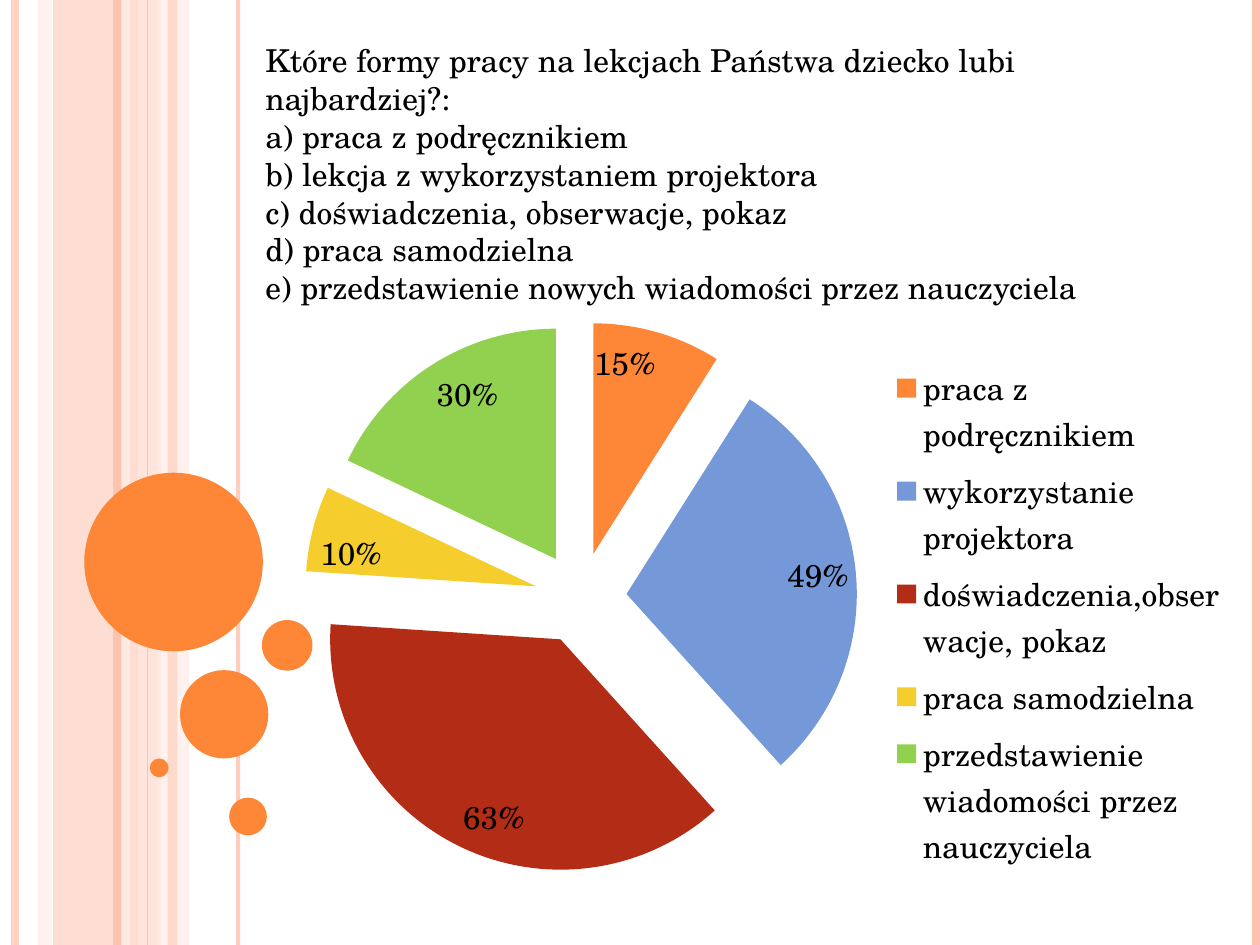
from lxml.etree import SubElement
from pptx import Presentation
from pptx.chart.data import CategoryChartData
from pptx.dml.color import RGBColor
from pptx.enum.chart import XL_CHART_TYPE as ChartType, XL_LABEL_POSITION as LabelPos, XL_LEGEND_POSITION as LegendPos
from pptx.enum.shapes import MSO_CONNECTOR as Connector, MSO_SHAPE as Shape
from pptx.enum.text import MSO_AUTO_SIZE as AutoSize
from pptx.oxml import parse_xml
from pptx.oxml.ns import qn
from pptx.util import Cm, Pt

BLACK = RGBColor(0x00, 0x00, 0x00)
ORANGE = RGBColor(0xFE, 0x86, 0x37)
BLUE = RGBColor(0x75, 0x98, 0xD9)
RED = RGBColor(0xB3, 0x2C, 0x16)
YELLOW = RGBColor(0xF5, 0xCD, 0x2D)
GREEN = RGBColor(0x92, 0xD0, 0x50)
SALMON = RGBColor(0xFE, 0xC3, 0xAE)
PEACH = RGBColor(0xFF, 0xD9, 0xCE)
CREAM = RGBColor(0xFF, 0xED, 0xE8)

WIDTH, HEIGHT = 25.4, 19.05

BANDS = [(1.07, 1.7, SALMON, 54), (0.76, 0.28, PEACH, 36),
         (2.74, 0.51, PEACH, 70), (3.18, 0.64, CREAM, 71)]
STRIPES = [(0.3, SALMON, 4.5, 73), (2.54, CREAM, 4.5, 83), (2.36, SALMON, 4.5, 100),
           (4.8, SALMON, 2.25, 82), (2.97, SALMON, 0.75, 100), (25.32, SALMON, 4.5, 100)]
FRONT_BAND = (3.38, 0.2, SALMON, 51)
BUBBLES = [(1.7, 9.53, 3.6), (3.63, 13.51, 1.78), (3.02, 15.29, 0.38),
           (4.62, 16.08, 0.76), (5.28, 12.5, 1.02)]

QUESTION = [
    "Które formy pracy na lekcjach Państwa dziecko lubi najbardziej?:",
    "a) praca z podręcznikiem",
    "b) lekcja z wykorzystaniem projektora",
    "c) doświadczenia, obserwacje, pokaz",
    "d) praca samodzielna",
    "e) przedstawienie nowych wiadomości przez nauczyciela",
]
ANSWERS = [
    ("praca z podręcznikiem", 0.15, ORANGE),
    ("wykorzystanie projektora", 0.49, BLUE),
    ("doświadczenia,obserwacje, pokaz", 0.63, RED),
    ("praca samodzielna", 0.1, YELLOW),
    ("przedstawienie wiadomości przez nauczyciela", 0.3, GREEN),
]


def chart_layout(x, y, w, h, inner=False):
    """Return a manual chart layout given in fractions of the chart."""
    target = '<c:layoutTarget val="inner"/>' if inner else ""
    return parse_xml(
        '<c:layout xmlns:c="http://schemas.openxmlformats.org/drawingml/2006/chart">'
        f'<c:manualLayout>{target}<c:xMode val="edge"/><c:yMode val="edge"/>'
        f'<c:x val="{x}"/><c:y val="{y}"/><c:w val="{w}"/><c:h val="{h}"/>'
        '</c:manualLayout></c:layout>')


class SurveySlide:
    """Draws the survey slide's elements in one shared style."""

    font_name = "TeX Gyre Schola"
    font_size = Pt(18)

    def __init__(self, slide):
        self.slide = slide
        self.shapes = slide.shapes

    def style(self, font):
        font.name, font.size = self.font_name, self.font_size
        font.color.rgb = BLACK

    def fade(self, element, opacity):
        if opacity < 100:
            color = next(element.iter(qn("a:srgbClr")))
            SubElement(color, qn("a:alpha")).set("val", str(opacity * 1000))

    def filled(self, kind, left, top, width, height, color, opacity=100):
        shape = self.shapes.add_shape(kind, Cm(left), Cm(top), Cm(width), Cm(height))
        shape.shadow.inherit = False
        shape.fill.solid()
        shape.fill.fore_color.rgb = color
        shape.line.fill.background()
        self.fade(shape._element.spPr, opacity)

    def band(self, left, width, color, opacity):
        self.filled(Shape.RECTANGLE, left, 0, width, HEIGHT, color, opacity)

    def bubble(self, left, top, size):
        self.filled(Shape.OVAL, left, top, size, size, ORANGE)

    def stripe(self, x, color, weight, opacity):
        stripe = self.shapes.add_connector(Connector.STRAIGHT, Cm(x), Cm(0), Cm(x), Cm(HEIGHT))
        stripe.line.color.rgb = color
        stripe.line.width = Pt(weight)
        properties = stripe._element.spPr
        self.fade(properties, opacity)
        SubElement(properties, qn("a:effectLst"))

    def text(self, left, top, width, height, lines):
        frame = self.shapes.add_textbox(Cm(left), Cm(top), Cm(width), Cm(height)).text_frame
        frame.word_wrap = True
        frame.auto_size = AutoSize.SHAPE_TO_FIT_TEXT
        frame.text = "\n".join(lines)
        for paragraph in frame.paragraphs:
            self.style(paragraph.font)

    def pie(self, left, top, width, height, answers):
        names, shares, colors = zip(*answers)
        data = CategoryChartData(number_format="0%")
        data.categories = names
        data.add_series("Series 1", shares)
        chart = self.shapes.add_chart(
            ChartType.PIE, Cm(left), Cm(top), Cm(width), Cm(height), data).chart
        chart.has_title = False
        self.style(chart.font)

        chart.has_legend = True
        legend = chart.legend
        legend.position = LegendPos.RIGHT
        legend.include_in_layout = False
        self.style(legend.font)
        legend._element.find(qn("c:legendPos")).addnext(chart_layout(0.65, 0.15, 0.34, 0.79))

        plot = chart.plots[0]
        plot.vary_by_categories = True
        plot_area = plot._element.getparent()
        for automatic in plot_area.findall(qn("c:layout")):
            plot_area.remove(automatic)
        plot_area.insert(0, chart_layout(0.067, 0.091, 0.552, 0.851, inner=True))

        series = plot.series[0]
        explosion = parse_xml(
            '<c:explosion xmlns:c="http://schemas.openxmlformats.org/drawingml/2006/chart" val="20"/>')
        series._element.find(qn("c:tx")).addnext(explosion)
        for index, color in enumerate(colors):
            fill = series.points[index].format.fill
            fill.solid()
            fill.fore_color.rgb = color

        labels = series.data_labels
        labels.show_value = True
        labels.show_percentage = False
        labels.number_format = "0%"
        labels.number_format_is_linked = False
        labels.position = LabelPos.INSIDE_END
        self.style(labels.font)


def main():
    deck = Presentation()
    deck.slide_width, deck.slide_height = Cm(WIDTH), Cm(HEIGHT)
    survey = SurveySlide(deck.slides.add_slide(deck.slide_layouts[6]))
    for band in BANDS:
        survey.band(*band)
    for stripe in STRIPES:
        survey.stripe(*stripe)
    survey.band(*FRONT_BAND)
    for bubble in BUBBLES:
        survey.bubble(*bubble)
    survey.text(5.1, 0.71, 18.01, 5.64, QUESTION)
    survey.pie(4.78, 5.13, 20.19, 13.41, ANSWERS)
    deck.save("out.pptx")


if __name__ == "__main__":
    main()
